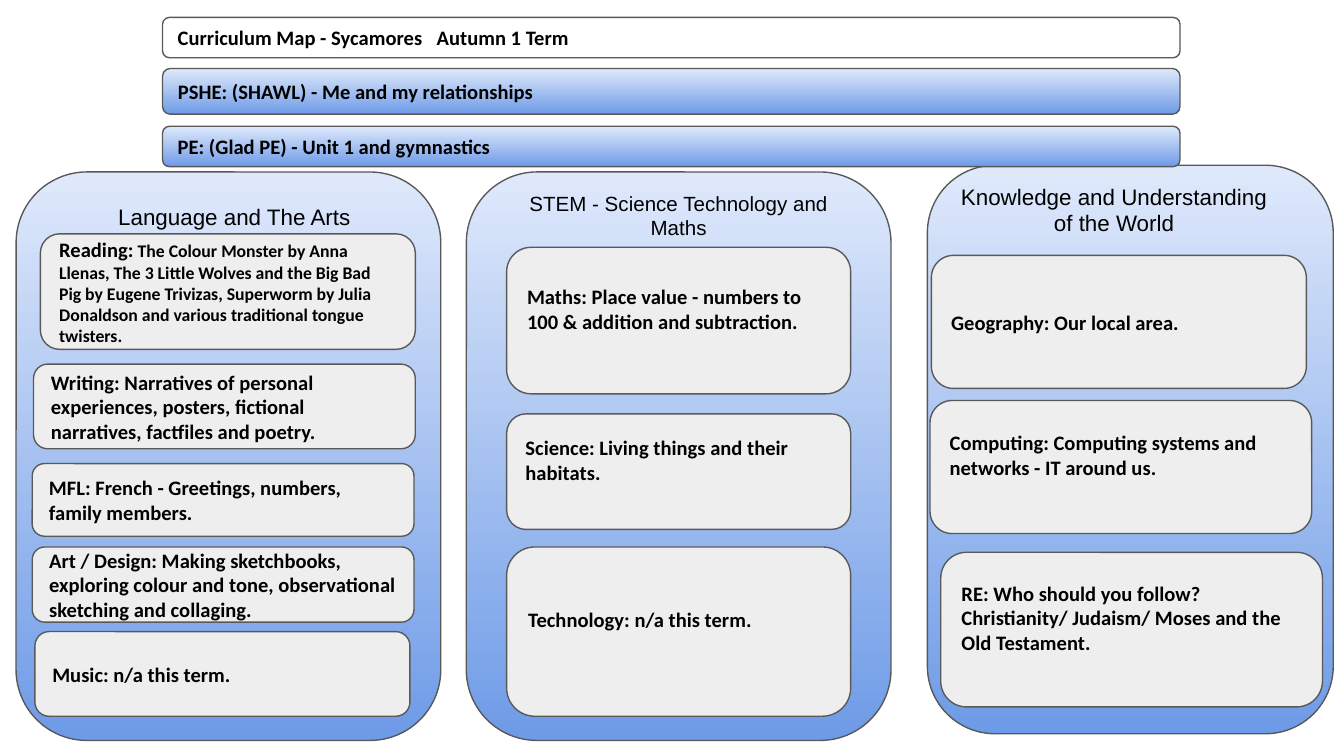
from dataclasses import dataclass

from pptx import Presentation
from pptx import util as u
from pptx.dml.color import RGBColor
from pptx.enum import shapes, text


@dataclass(frozen=True)
class Theme:
    top: str = "DFE9FB"
    bottom: str = "6E9BE7"
    card: str = "EEEEEE"
    line: str = "595959"
    ink: str = "000000"
    body_font: str = "Calibri"
    head_font: str = "Arial"
    body: float = 11
    small: float = 9.5
    heading: float = 12
    stroke: float = 0.75
    inset: float = 0.1
    text_line: float = 0.18


@dataclass(frozen=True)
class Run:
    text: str
    size: float = Theme.body
    spacing: float = 0


@dataclass(frozen=True)
class Box:
    left: float
    top: float
    width: float
    height: float


@dataclass(frozen=True)
class Card:
    box: Box
    paragraphs: list[list[Run]]
    lines_below: int = 0


@dataclass(frozen=True)
class Heading:
    box: Box
    run: Run
    centred: bool = True
    indent: float = 0


T = Theme()
WIDTH = 10
HEIGHT = WIDTH * 9 / 16


def single(words: str) -> list[list[Run]]:
    return [[Run(words)]]


def bar(top: float, height: float) -> Box:
    return Box(1.21, top, 7.57, height)


PANELS = [
    Box(6.9, 1.23, 3.02, 4.23),
    Box(3.47, 1.28, 3.16, 4.23),
    Box(0.12, 1.28, 3.16, 4.23),
]

CARDS = [
    Card(Box(6.93, 1.9, 2.79, 0.99), single("Geography: Our local area.")),
    Card(Box(0.25, 2.71, 2.84, 0.63), single(
        "Writing: Narratives of personal experiences, posters, fictional "
        "narratives, factfiles and poetry.")),
    Card(Box(3.77, 1.84, 2.56, 1.09), single(
        "Maths: Place value - numbers to 100 & addition and subtraction."), 1),
    Card(Box(3.77, 3.08, 2.56, 0.86), single(
        "Science: Living things and their habitats."), 1),
    Card(Box(0.3, 1.74, 2.79, 0.86), [[
        Run("Reading:"),
        Run(" The Colour Monster by Anna Llenas, The 3 Little Wolves and the "
            "Big Bad Pig by Eugene Trivizas, Superworm by Julia Donaldson and "
            "various traditional tongue twisters.", T.small),
    ]]),
    Card(Box(6.92, 2.98, 2.84, 0.99), single(
        "Computing: Computing systems and networks - IT around us."), 1),
    Card(Box(0.24, 3.45, 2.84, 0.54), single(
        "MFL: French - Greetings, numbers, family members.")),
    Card(Box(0.24, 4.07, 2.84, 0.56), single(
        "Art / Design: Making sketchbooks, exploring colour and tone, "
        "observational sketching and collaging.")),
    Card(Box(0.26, 4.7, 2.79, 0.63), single("Music: n/a this term.")),
    Card(Box(3.77, 4.07, 2.56, 1.26), single("Technology: n/a this term."), 1),
    Card(Box(7, 4.11, 2.84, 1.15), [
        [Run("RE: Who should you follow?")],
        [Run("Christianity/ Judaism/ Moses and the Old Testament.")],
    ], 1),
]

TITLE = Card(bar(0.13, 0.3), [[
    Run("Curriculum Map - Sycamores"),
    Run(" ", spacing=5),
    Run("Autumn 1 Term"),
]])

BARS = [
    Card(bar(0.51, 0.34), single("PSHE: (SHAWL) - Me and my relationships")),
    Card(bar(0.94, 0.3), single("PE: (Glad PE) - Unit 1 and gymnastics")),
]

HEADINGS = [
    Heading(Box(0.41, 1.41, 2.56, 0.34),
            Run("Language and The Arts", T.heading), False, 0.37),
    Heading(Box(3.77, 1.32, 2.56, 0.3),
            Run("STEM - Science Technology and Maths")),
    Heading(Box(7.01, 1.26, 2.56, 0.63),
            Run("Knowledge and Understanding of the World", T.heading)),
]


def place(box: Box) -> list[int]:
    return [u.Inches(v) for v in (box.left, box.top, box.width, box.height)]


def add_rounded(s, box: Box):
    sp = s.shapes.add_shape(
        shapes.MSO_SHAPE.FLOWCHART_ALTERNATE_PROCESS, *place(box))
    sp.shadow.inherit = False
    sp.line.color.rgb = RGBColor.from_string(T.line)
    sp.line.width = u.Pt(T.stroke)
    return sp


def fill_gradient(sp) -> None:
    sp.fill.gradient()
    sp.fill.gradient_angle = 270
    for stop, position, colour in zip(
            sp.fill.gradient_stops, (0, 1), (T.top, T.bottom)):
        stop.position = position
        stop.color.rgb = RGBColor.from_string(colour)


def fill_solid(sp, colour: str) -> None:
    sp.fill.solid()
    sp.fill.fore_color.rgb = RGBColor.from_string(colour)


def set_insets(tf, left: float = 0, bottom: float = 0) -> None:
    tf.word_wrap = True
    tf.margin_top = tf.margin_right = u.Inches(T.inset)
    tf.margin_left = u.Inches(T.inset + left)
    tf.margin_bottom = u.Inches(T.inset + bottom)


def add_run(p, run: Run, font: str, bold: bool) -> None:
    r = p.add_run()
    r.text = run.text
    r.font.name = font
    r.font.size = u.Pt(run.size)
    r.font.bold = bold
    r.font.color.rgb = RGBColor.from_string(T.ink)
    if run.spacing:
        r.font._element.set("spc", str(int(run.spacing * 100)))


def add_card(s, card: Card):
    sp = add_rounded(s, card.box)
    tf = sp.text_frame
    set_insets(tf, bottom=card.lines_below * T.text_line)
    tf.vertical_anchor = text.MSO_ANCHOR.MIDDLE
    for i, runs in enumerate(card.paragraphs):
        p = tf.add_paragraph() if i else tf.paragraphs[0]
        p.alignment = text.PP_ALIGN.LEFT
        for run in runs:
            add_run(p, run, T.body_font, True)
    return sp


def add_heading(s, heading: Heading) -> None:
    tf = s.shapes.add_textbox(*place(heading.box)).text_frame
    set_insets(tf, left=heading.indent)
    p = tf.paragraphs[0]
    p.alignment = text.PP_ALIGN.CENTER if heading.centred else text.PP_ALIGN.LEFT
    add_run(p, heading.run, T.head_font, False)


def main() -> None:
    prs = Presentation()
    prs.slide_width, prs.slide_height = u.Inches(WIDTH), u.Inches(HEIGHT)
    s = prs.slides.add_slide(prs.slide_layouts[6])
    for panel in PANELS:
        fill_gradient(add_rounded(s, panel))
    for card in CARDS:
        fill_solid(add_card(s, card), T.card)
    add_card(s, TITLE).fill.background()
    for heading in HEADINGS:
        add_heading(s, heading)
    for card in BARS:
        fill_gradient(add_card(s, card))
    prs.save("out.pptx")


if __name__ == "__main__":
    main()
